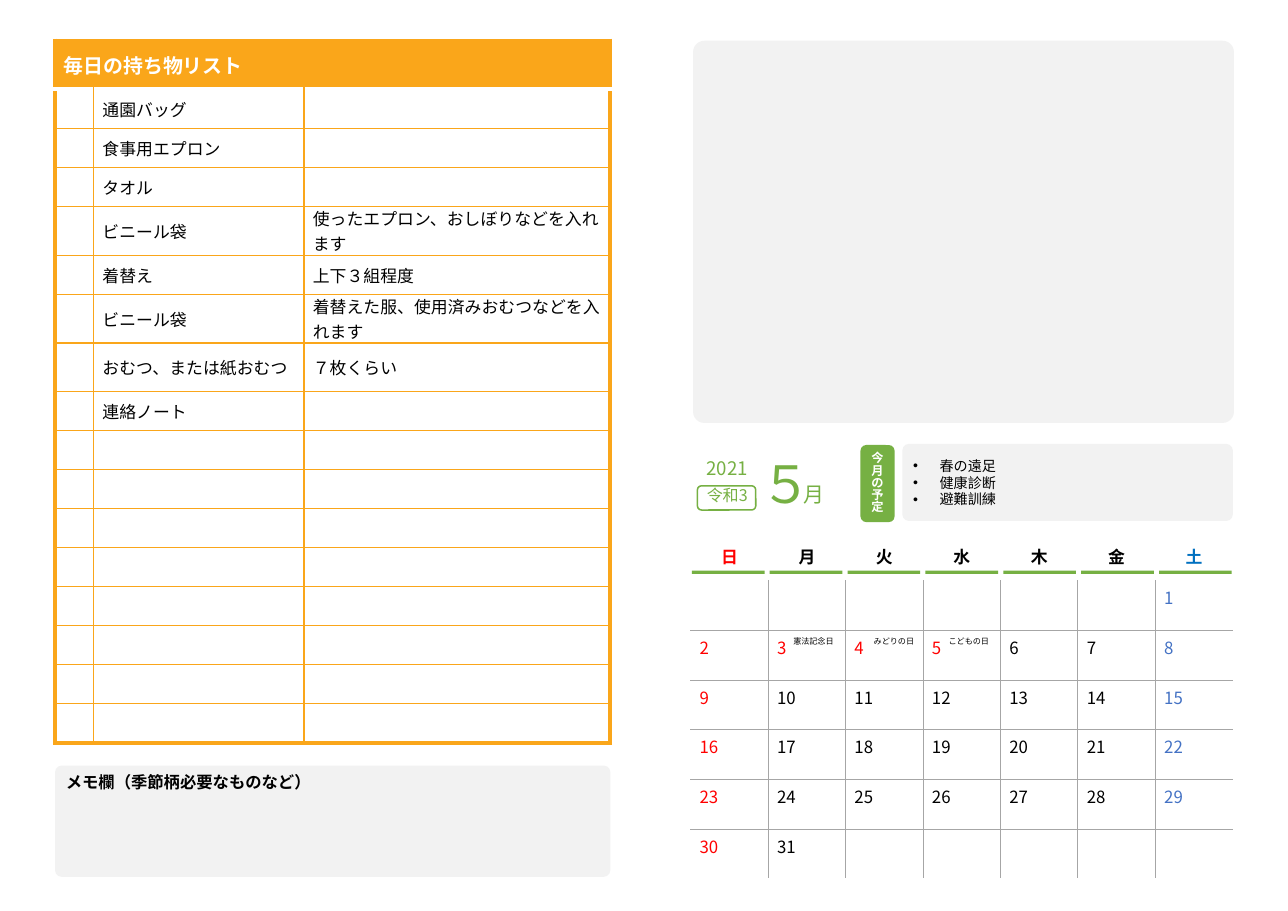
from dataclasses import dataclass
from pptx import Presentation
from pptx import util as u
from pptx.dml import color
from pptx.enum import shapes, text
from pptx.oxml import ns
from lxml import etree

FONT = "Noto Sans CJK JP"
ORANGE, GREEN, GREY, LINE = "FAA61A", "76B043", "F2F2F2", "A6A6A6"
RED, BLUE, SATURDAY, BLACK, WHITE = "FF0000", "4472C4", "0070C0", "000000", "FFFFFF"
CENTER, MIDDLE = text.PP_ALIGN.CENTER, text.MSO_ANCHOR.MIDDLE


@dataclass
class Box:
    left: float
    top: float
    width: float
    height: float

    def lengths(self) -> list:
        return [u.Inches(n) for n in (self.left, self.top, self.width, self.height)]


@dataclass
class Style:
    size: float
    colour: str = BLACK
    bold: bool = False
    align: int = None
    spacing: object = None


@dataclass
class Label:
    box: Box
    words: str
    style: Style
    wrap: bool = True


@dataclass
class Panel:
    box: Box
    rounding: float
    fill: str = None
    outline: str = None


def rgb(value: str) -> color.RGBColor:
    return color.RGBColor.from_string(value)


def paint(part, value: str) -> None:
    part.fill.solid()
    part.fill.fore_color.rgb = rgb(value)


def write(frame, words: str, style: Style) -> None:
    frame.text = words
    for paragraph in frame.paragraphs:
        paragraph.alignment = style.align
        paragraph.line_spacing = style.spacing
        paragraph.space_before = u.Pt(0)
        for run in paragraph.runs:
            run.font.size, run.font.bold = u.Pt(style.size), style.bold
            run.font.name, run.font.color.rgb = FONT, rgb(style.colour)
            etree.SubElement(run.font._element, ns.qn("a:ea"), typeface=FONT)
        if not paragraph.runs:
            etree.SubElement(paragraph._p, ns.qn("a:endParaRPr"), sz=str(int(style.size * 100)))


def set_frame(frame, anchor: int = text.MSO_ANCHOR.TOP, wrap: bool = True) -> None:
    frame.margin_left = frame.margin_right = u.Inches(0.08)
    frame.margin_top = frame.margin_bottom = u.Inches(0.04)
    frame.auto_size, frame.word_wrap = text.MSO_AUTO_SIZE.NONE, wrap
    frame.vertical_anchor = anchor


def place(shape, box: Box) -> None:
    shape.left, shape.top, shape.width, shape.height = box.lengths()


def add_label(slide, label: Label) -> None:
    frame = slide.shapes.add_textbox(*label.box.lengths()).text_frame
    set_frame(frame, wrap=label.wrap)
    write(frame, label.words, label.style)


def add_panel(slide, panel: Panel, kind: int = shapes.MSO_SHAPE.ROUNDED_RECTANGLE):
    shape = slide.shapes.add_shape(kind, *panel.box.lengths())
    shape.shadow.inherit = False
    if panel.rounding:
        shape.adjustments[0] = panel.rounding
    if panel.fill:
        paint(shape, panel.fill)
    else:
        shape.fill.background()
    if panel.outline:
        shape.line.color.rgb, shape.line.width = rgb(panel.outline), u.Pt(1)
    else:
        shape.line.fill.background()
    return shape


def set_borders(cell, **sides: tuple) -> None:
    for side in "LRTB":
        colour, width = sides[side]
        line = etree.SubElement(cell._tc.get_or_add_tcPr(), ns.qn(f"a:ln{side}"), w=str(u.Pt(width)))
        fill = etree.SubElement(line, ns.qn("a:solidFill"))
        etree.SubElement(fill, ns.qn("a:srgbClr"), val=colour)


def add_grid(slide, box: Box, widths: list, heights: list):
    grid = slide.shapes.add_table(len(heights), len(widths), *box.lengths()).table
    grid.first_row = grid.horz_banding = False
    for column, width in zip(grid.columns, widths):
        column.width = u.Inches(width)
    for row, height in zip(grid.rows, heights):
        row.height = u.Inches(height)
    return grid


def fill_cell(cell, words: str, style: Style, anchor: int, pad: float) -> None:
    cell.margin_left = cell.margin_right = u.Inches(0.08)
    cell.margin_top = cell.margin_bottom = u.Inches(pad)
    cell.vertical_anchor = anchor
    write(cell.text_frame, words, style)


def add_calendar(slide) -> None:
    box = Box(6.27, 4.82, 4.92, 3.16)
    grid = add_grid(slide, box, [box.width / 7] * 7, [box.height / 7] * 7)
    white, grey = (WHITE, 0.75), (LINE, 0.75)
    for row in range(7):
        for column in range(7):
            cell = grid.cell(row, column)
            if row == 0:
                colour = {0: RED, 6: SATURDAY}.get(column, BLACK)
                fill_cell(cell, "日月火水木金土"[column], Style(11, colour, True, CENTER), MIDDLE, 0.04)
                set_borders(cell, L=(WHITE, 1), R=(WHITE, 1), T=(WHITE, 1), B=white)
            else:
                day = row * 7 + column - 12
                colour = RED if column == 0 or day in HOLIDAYS else BLUE if column == 6 else BLACK
                words = str(day) if 1 <= day <= 31 else ""
                fill_cell(cell, words, Style(11, colour), text.MSO_ANCHOR.TOP, 0.04)
                set_borders(cell, L=grey if column else white, R=grey if column < 6 else white,
                            T=grey if row > 1 else white, B=grey if row < 6 else white)
            cell.fill.background()


def add_belongings(slide) -> None:
    box, tall, tall_rows = Box(0.5, 0.37, 5.04, 6.37), 0.44, (0, 4, 6, 7)
    short = (box.height - tall * len(tall_rows)) / (17 - len(tall_rows))
    grid = add_grid(slide, box, [0.35, 1.91, 2.78], [tall if r in tall_rows else short for r in range(17)])
    thin, thick, gap = (ORANGE, 1), (ORANGE, 3), (WHITE, 3)
    grid.cell(0, 0).merge(grid.cell(0, 2))
    for row in range(17):
        item = BELONGINGS[row - 1] if 1 <= row <= len(BELONGINGS) else ("", "")
        for column, words in enumerate(("", *item)):
            cell = grid.cell(row, column)
            fill_cell(cell, words, Style(11), MIDDLE, 0)
            set_borders(cell, L=thin if row and column else thick, R=thin if row and column < 2 else thick,
                        T={0: thick, 1: gap}.get(row, thin), B={0: gap, 16: thick}.get(row, thin))
            if row == 0:
                paint(cell, ORANGE)
            else:
                cell.fill.background()
    fill_cell(grid.cell(0, 0), "毎日の持ち物リスト", Style(13, WHITE, True), MIDDLE, 0.04)


def add_plans(body) -> None:
    place(body, Box(8.19, 4.03, 3, 0.7))
    outline = etree.Element(ns.qn("a:prstGeom"), prst="roundRect")
    guides = etree.SubElement(outline, ns.qn("a:avLst"))
    etree.SubElement(guides, ns.qn("a:gd"), name="adj", fmla="val 8700")
    body._element.spPr.insert(1, outline)
    paint(body, GREY)
    set_frame(body.text_frame, MIDDLE)
    write(body.text_frame, "春の遠足\n健康診断\n避難訓練", Style(9.2, spacing=u.Pt(11)))
    for paragraph in body.text_frame.paragraphs:
        properties = paragraph._p.get_or_add_pPr()
        properties.set("marL", str(u.Inches(0.24)))
        properties.set("indent", str(u.Inches(-0.24)))
        etree.SubElement(properties, ns.qn("a:buChar"), char="•")


HOLIDAYS = {3: ("憲法記念日", 7.12), 4: ("みどりの日", 7.85), 5: ("こどもの日", 8.53)}
BELONGINGS = [
    ("通園バッグ", ""), ("食事用エプロン", ""), ("タオル", ""),
    ("ビニール袋", "使ったエプロン、おしぼりなどを入れます"), ("着替え", "上下３組程度"),
    ("ビニール袋", "着替えた服、使用済みおむつなどを入れます"),
    ("おむつ、または紙おむつ", "７枚くらい"), ("連絡ノート", ""),
]
DATE_LABELS = [
    Label(Box(7.21, 4.36, 0.39, 0.33), "月", Style(13.7, GREEN, spacing=0.9), False),
    Label(Box(6.29, 4.13, 0.62, 0.31), "2021", Style(12.2, GREEN, align=CENTER, spacing=0.9)),
    Label(Box(6.29, 4.39, 0.62, 0.28), "令和3", Style(10.5, GREEN, align=CENTER, spacing=0.9)),
]


def main() -> None:
    deck = Presentation()
    deck.slide_width, deck.slide_height = u.Inches(11.69), u.Inches(8.27)
    slide = deck.slides.add_slide(deck.slide_layouts[1])
    month, plans = slide.placeholders
    add_calendar(slide)
    for weekday in range(7):
        bar = Panel(Box(6.28 + weekday * 4.24 / 6, 5.18, 0.66, 0.03), 0, GREEN)
        add_panel(slide, bar, shapes.MSO_SHAPE.RECTANGLE)
    for words, left in HOLIDAYS.values():
        add_label(slide, Label(Box(left, 5.74, 0.58, 0.19), words, Style(5.3), False))
    add_panel(slide, Panel(Box(6.29, 0.37, 4.91, 3.47), 0.03, GREY))
    place(month, Box(6.82, 4.13, 0.53, 0.67))
    set_frame(month.text_frame)
    write(month.text_frame, "５", Style(33.6, GREEN, align=text.PP_ALIGN.LEFT, spacing=0.9))
    add_panel(slide, Panel(Box(6.33, 4.41, 0.53, 0.22), 0.17, outline=GREEN))
    for label in DATE_LABELS:
        add_label(slide, label)
    add_plans(plans)
    plans_tag = add_panel(slide, Panel(Box(7.81, 4.04, 0.31, 0.7), 0.17, GREEN)).text_frame
    set_frame(plans_tag, MIDDLE)
    write(plans_tag, "今月の予定", Style(8, WHITE, True, CENTER, u.Pt(8)))
    add_belongings(slide)
    memo = add_panel(slide, Panel(Box(0.5, 6.95, 5.04, 1.01), 0.06, GREY)).text_frame
    set_frame(memo)
    write(memo, "メモ欄（季節柄必要なものなど）", Style(10.7, bold=True, align=text.PP_ALIGN.LEFT))
    deck.save("out.pptx")


if __name__ == "__main__":
    main()
